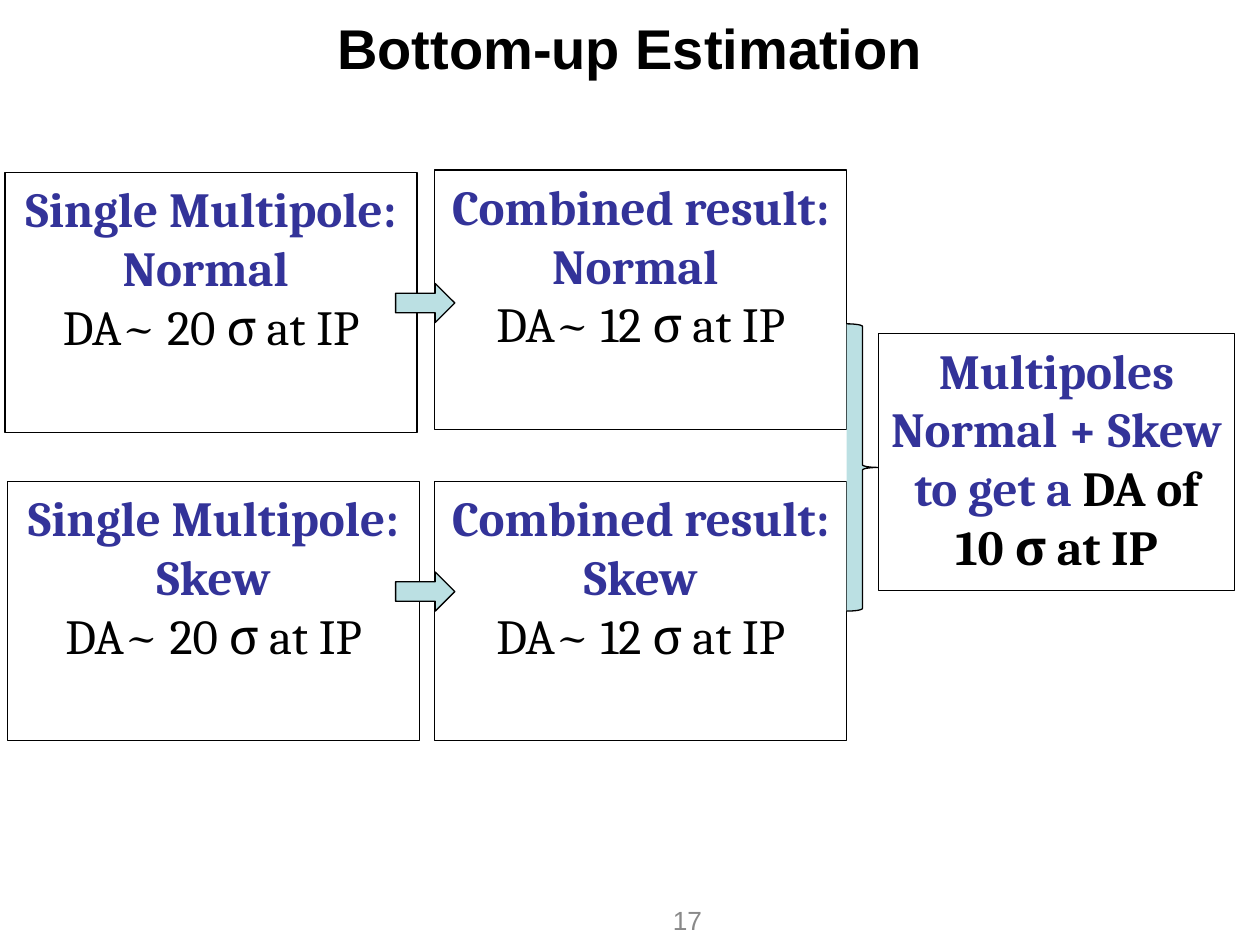
import pptx
import pptx.util
import pptx.dml.color
import pptx.enum.shapes
import pptx.enum.text

BLACK = pptx.dml.color.RGBColor(0x00, 0x00, 0x00)
INDIGO = pptx.dml.color.RGBColor(0x33, 0x33, 0x99)
PALE_TEAL = pptx.dml.color.RGBColor(0xBB, 0xE0, 0xE3)
GREY = pptx.dml.color.RGBColor(0x89, 0x89, 0x89)
SHAPES = pptx.enum.shapes.MSO_SHAPE
ALIGN = pptx.enum.text.PP_ALIGN
ANCHOR = pptx.enum.text.MSO_ANCHOR

presentation = pptx.Presentation()
presentation.slide_width = pptx.util.Inches(10)
presentation.slide_height = pptx.util.Inches(7.5)
slide = presentation.slides.add_slide(presentation.slide_layouts[6])
column = presentation.slide_width / 100
row = presentation.slide_height / 100

HEADING = {"name": "Cambria", "size": pptx.util.Pt(28), "bold": True, "color": INDIGO}
RESULT = {**HEADING, "bold": False, "color": BLACK}
STRONG_RESULT = {**HEADING, "color": BLACK}
TITLE = {"name": "Arial", "size": pptx.util.Pt(32), "bold": True, "color": BLACK}
PAGE_NUMBER = {"name": "Arial", "size": pptx.util.Pt(15), "bold": False, "color": GREY}


def add_outlined(kind, left, top, width, height, fill=None):
    shape = slide.shapes.add_shape(
        kind, int(left * column), int(top * row), int(width * column), int(height * row))
    shape.shadow.inherit = False
    shape.line.color.rgb = BLACK
    shape.line.width = pptx.util.Pt(0.75)
    if fill is None:
        shape.fill.background()
    else:
        shape.fill.solid()
        shape.fill.fore_color.rgb = fill
    return shape


def write_text(shape, paragraphs, anchor, alignment):
    frame = shape.text_frame
    frame.word_wrap = True
    frame.vertical_anchor = anchor
    for index, runs in enumerate(paragraphs):
        paragraph = frame.add_paragraph() if index else frame.paragraphs[0]
        paragraph.alignment = alignment
        for text, font_format in runs:
            run = paragraph.add_run()
            run.text = text
            for attribute, value in font_format.items():
                if attribute == "color":
                    run.font.color.rgb = value
                else:
                    setattr(run.font, attribute, value)


estimates = [
    (0.4, 18.27, ["Single Multipole:", "Normal "], "DA~ 20 σ at IP"),
    (34.5, 18, ["Combined result: Normal "], "DA~ 12 σ at IP"),
    (0.6, 50.93, ["Single Multipole: Skew"], "DA~ 20 σ at IP"),
    (34.5, 50.93, ["Combined result:", "Skew"], "DA~ 12 σ at IP"),
]
for left, top, headings, result in estimates:
    box = add_outlined(SHAPES.RECTANGLE, left, top, 32.7, 27.47)
    paragraphs = [[(heading, HEADING)] for heading in headings] + [[(result, RESULT)]]
    write_text(box, paragraphs, ANCHOR.TOP, ALIGN.CENTER)

total_box = add_outlined(SHAPES.RECTANGLE, 69.7, 35.33, 28.3, 27.2)
write_text(total_box, [
    [("Multipoles", HEADING)],
    [("Normal + Skew", HEADING)],
    [("to get a ", HEADING), ("DA of 10 σ at IP", STRONG_RESULT)],
], ANCHOR.TOP, ALIGN.CENTER)

for arrow_top in (30, 60.53):
    add_outlined(SHAPES.RIGHT_ARROW, 31.4, arrow_top, 4.7, 4.13, PALE_TEAL)
add_outlined(SHAPES.RIGHT_BRACE, 67.2, 34.27, 2.5, 30.4, PALE_TEAL)

labels = [
    ("Bottom-up Estimation", TITLE, ALIGN.CENTER, 0, 0, 100, 10),
    ("17", PAGE_NUMBER, ALIGN.RIGHT, 49.2, 94.67, 7.5, 5.33),
]
for text, font_format, alignment, left, top, width, height in labels:
    label = slide.shapes.add_textbox(
        int(left * column), int(top * row), int(width * column), int(height * row))
    write_text(label, [[(text, font_format)]], ANCHOR.MIDDLE, alignment)

presentation.save("out.pptx")
